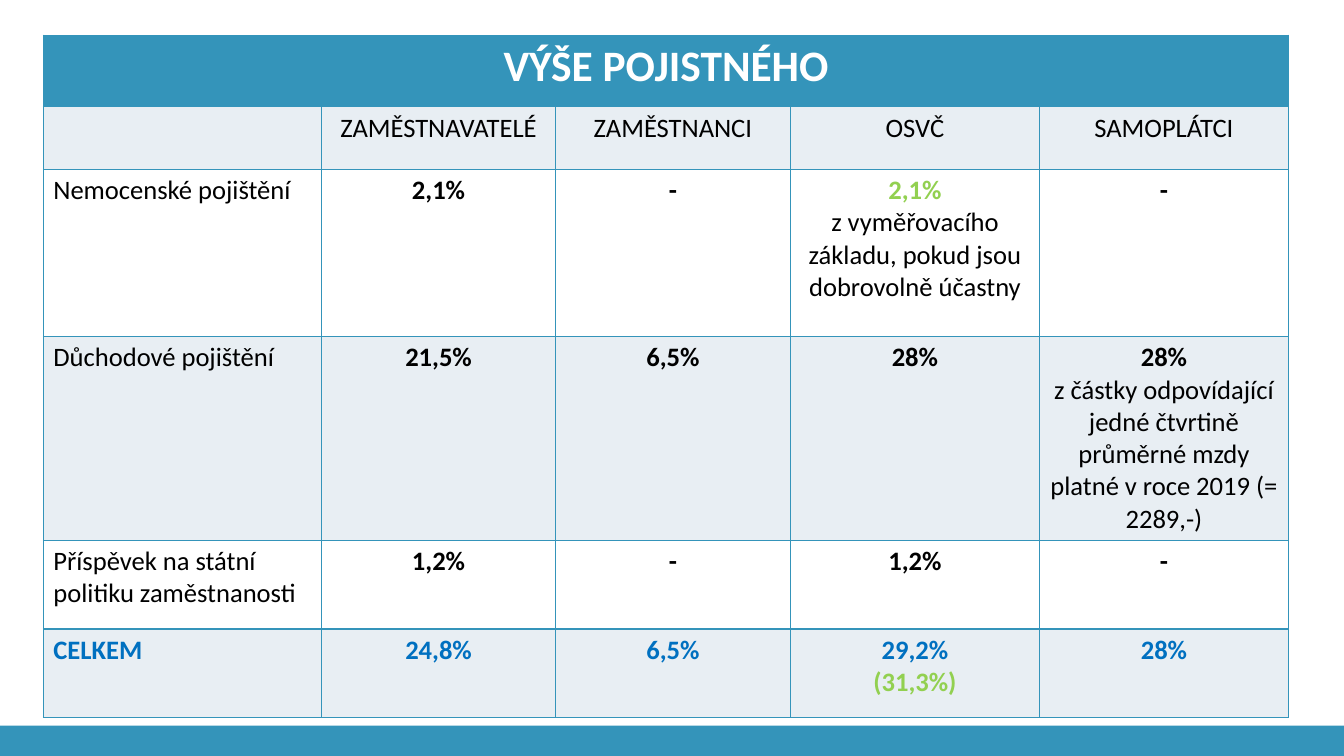
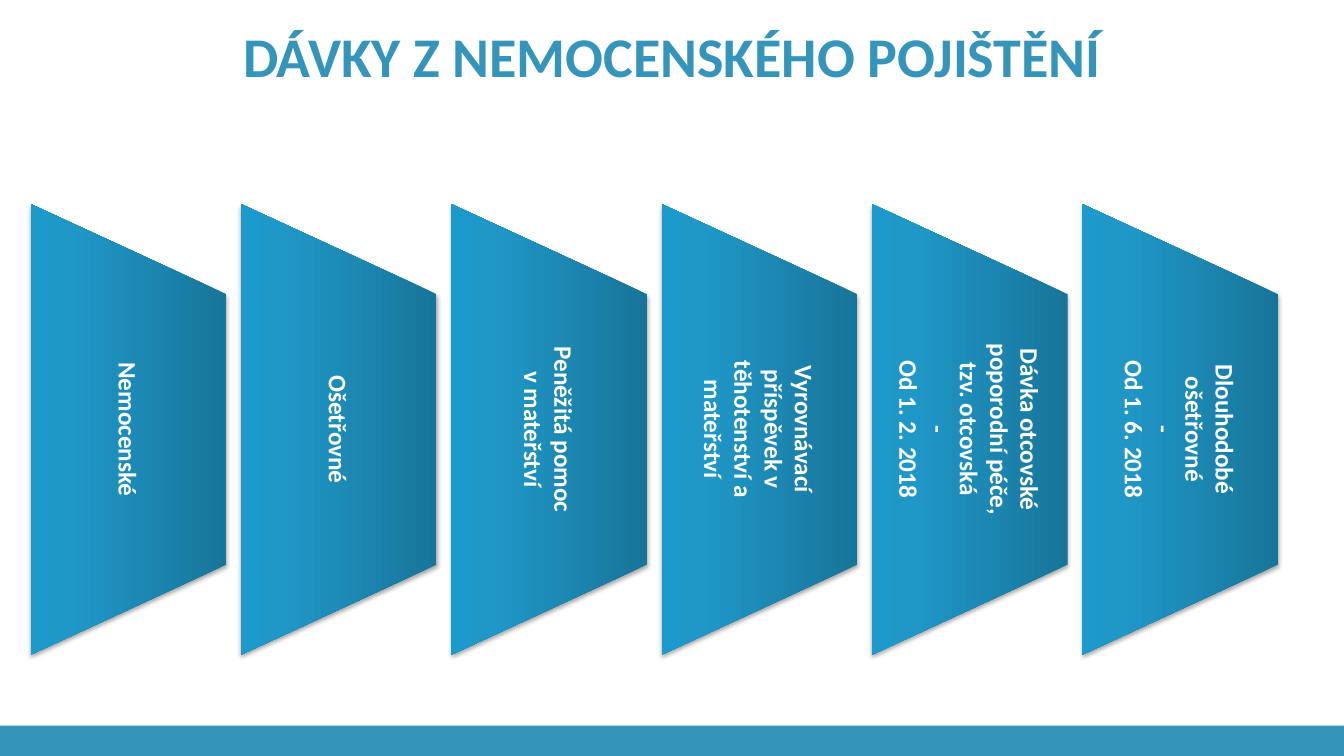
"""Build two slides on Czech social insurance rates and sickness benefits."""
from dataclasses import dataclass

from pptx import Presentation
from pptx.dml.color import RGBColor as RGB
from pptx.enum.shapes import MSO_SHAPE as SHAPE
from pptx.enum.text import MSO_ANCHOR as ANCHOR, PP_ALIGN as ALIGN
from pptx.oxml import parse_xml
from pptx.oxml.ns import nsdecls, qn
from pptx.util import Inches, Pt

FONT = "Calibri"
COLORS = {
    "accent": "3494BA", "white": "FFFFFF", "black": "000000", "stripe": "E8EEF3",
    "green": "92D050", "total": "0070C0",
    "dark": "18759A", "mid": "1F98C8", "light": "1C9ACC",
}
GRADIENT = ((0, "dark"), (80, "mid"), (100, "light"))

SLIDE_W, SLIDE_H, BAND_H = 13.33, 7.5, 0.3
COL_WIDTHS = (2.76, 2.32, 2.33, 2.47, 2.47)
ROW_HEIGHTS = (0.71, 0.62, 1.66, 1.97, 0.88, 0.88)
BLOCK_LEFT, BLOCK_TOP, BLOCK_W, BLOCK_H = -0.96, 3.29, 4.47, 1.94
BLOCK_LAST_LEFT = 9.47


@dataclass(frozen=True)
class Line:
    """One paragraph with its look."""
    text: str
    size: float = 19
    color: str = "black"
    bold: bool = False


def label(text: str) -> list[Line]:
    """Return a plain table entry."""
    return [Line(text)]


def rate(text: str, color: str = "black") -> list[Line]:
    """Return a bold table entry."""
    return [Line(text, color=color, bold=True)]


RATES = [
    [[], label("ZAMĚSTNAVATELÉ"), label("ZAMĚSTNANCI"), label("OSVČ"), label("SAMOPLÁTCI")],
    [label("Nemocenské pojištění"), rate("2,1%"), rate("-"),
     rate("2,1%", "green") + label("z vyměřovacího základu, pokud jsou dobrovolně účastny"),
     rate("-")],
    [label("Důchodové pojištění"), rate("21,5%"), rate("6,5%"), rate("28%"),
     rate("28%") + label("z částky odpovídající jedné čtvrtině průměrné mzdy "
                         "platné v roce 2019 (= 2289,-)")],
    [label("Příspěvek na státní politiku zaměstnanosti"),
     rate("1,2%"), rate("-"), rate("1,2%"), rate("-")],
    [rate("CELKEM", "total"), rate("24,8%", "total"), rate("6,5%", "total"),
     rate("29,2%", "total") + rate("(31,3%)", "green"), rate("28%", "total")],
]

BENEFITS = (
    ("Nemocenské",),
    ("Ošetřovné",),
    ("Peněžitá pomoc v mateřství",),
    ("Vyrovnávací příspěvek v těhotenství a mateřství",),
    ("Dávka otcovské poporodní péče, tzv. otcovská", "-", "Od 1. 2. 2018"),
    ("Dlouhodobé ošetřovné", "-", "Od 1. 6. 2018"),
)


def rgb(name: str) -> RGB:
    """Look up a colour by name."""
    return RGB.from_string(COLORS[name])


def write(tf, lines: list[Line], align=ALIGN.CENTER) -> None:
    """Fill a text frame, one paragraph per line."""
    for i, line in enumerate(lines):
        p = tf.paragraphs[0] if i == 0 else tf.add_paragraph()
        p.alignment = align
        r = p.add_run()
        r.text = line.text
        r.font.name = FONT
        r.font.size = Pt(line.size)
        r.font.bold = line.bold
        r.font.color.rgb = rgb(line.color)


def add_slide(prs):
    """Add a blank slide with the bottom band."""
    s = prs.slides.add_slide(prs.slide_layouts[6])
    sp = s.shapes.add_shape(SHAPE.RECTANGLE, 0, Inches(SLIDE_H - BAND_H),
                            Inches(SLIDE_W), Inches(BAND_H))
    sp.shadow.inherit = False
    sp.fill.solid()
    sp.fill.fore_color.rgb = rgb("accent")
    sp.line.fill.background()
    return s


def add_title(s, text: str) -> None:
    """Add the slide title."""
    tf = s.shapes.add_textbox(0, 0, Inches(SLIDE_W), Inches(0.94)).text_frame
    tf.word_wrap = True
    tf.vertical_anchor = ANCHOR.BOTTOM
    write(tf, [Line(text, 40, "accent", True)])
    tf.paragraphs[0].line_spacing = 0.9


def style_cell(cell, fill: str) -> None:
    """Give a cell its borders and fill."""
    tc_pr = cell._tc.get_or_add_tcPr()
    for side in "LRTB":
        tc_pr.append(parse_xml(
            f'<a:ln{side} {nsdecls("a")} w="{Pt(0.96)}"><a:solidFill>'
            f'<a:srgbClr val="{COLORS["accent"]}"/></a:solidFill></a:ln{side}>'))
    cell.fill.solid()
    cell.fill.fore_color.rgb = rgb(fill)


def add_rates(s) -> None:
    """Add the table of insurance rates."""
    table = s.shapes.add_table(
        len(ROW_HEIGHTS), len(COL_WIDTHS), Inches(0.43), Inches(0.35),
        Inches(sum(COL_WIDTHS)), Inches(sum(ROW_HEIGHTS))).table
    for col, width in zip(table.columns, COL_WIDTHS):
        col.width = Inches(width)
    for i, (row, height) in enumerate(zip(table.rows, ROW_HEIGHTS)):
        row.height = Inches(height)
        fill = "accent" if i == 0 else "stripe" if i % 2 else "white"
        for cell in row.cells:
            style_cell(cell, fill)
    heading = table.cell(0, 0)
    heading.merge(table.cell(0, len(COL_WIDTHS) - 1))
    write(heading.text_frame, [Line("VÝŠE POJISTNÉHO", 31, "white", True)])
    for i, entries in enumerate(RATES, start=1):
        for j, lines in enumerate(entries):
            write(table.cell(i, j).text_frame, lines, ALIGN.CENTER if j else ALIGN.LEFT)


def add_benefit(s, left: float, texts: tuple[str, ...]) -> None:
    """Add one tapered block with text turned downwards."""
    sp = s.shapes.add_shape(SHAPE.TRAPEZOID, Inches(left), Inches(BLOCK_TOP),
                            Inches(BLOCK_W), Inches(BLOCK_H))
    sp.rotation = 90
    sp.adjustments[0] = 0.2 * BLOCK_W / BLOCK_H
    sp.line.fill.background()
    sp.fill.gradient()
    sp.fill.gradient_angle = 270
    sp_pr = sp._element.spPr
    stops = sp_pr.find(qn("a:gradFill")).find(qn("a:gsLst"))
    for stop in list(stops):
        stops.remove(stop)
    for pos, color in GRADIENT:
        stops.append(parse_xml(
            f'<a:gs {nsdecls("a")} pos="{pos * 1000}">'
            f'<a:srgbClr val="{COLORS[color]}"/></a:gs>'))
    sp.shadow.inherit = False
    sp_pr.find(qn("a:effectLst")).append(parse_xml(
        f'<a:outerShdw {nsdecls("a")} blurRad="{Pt(3.1)}" dist="{Pt(1.8)}" dir="5400000" '
        f'rotWithShape="0"><a:srgbClr val="{COLORS["black"]}">'
        '<a:alpha val="35000"/></a:srgbClr></a:outerShdw>'))
    tf = sp.text_frame
    tf.word_wrap = True
    tf.vertical_anchor = ANCHOR.MIDDLE
    tf.margin_left = tf.margin_right = Inches(0.76)
    tf.margin_top, tf.margin_bottom = Inches(0), Inches(0.26)
    write(tf, [Line(text, 18, "white", True) for text in texts])


def main() -> None:
    """Build and save the presentation."""
    prs = Presentation()
    prs.slide_width, prs.slide_height = Inches(SLIDE_W), Inches(SLIDE_H)
    add_rates(add_slide(prs))
    s = add_slide(prs)
    add_title(s, "DÁVKY Z NEMOCENSKÉHO POJIŠTĚNÍ")
    pitch = (BLOCK_LAST_LEFT - BLOCK_LEFT) / (len(BENEFITS) - 1)
    for i, texts in enumerate(BENEFITS):
        add_benefit(s, BLOCK_LEFT + i * pitch, texts)
    prs.save("out.pptx")


if __name__ == "__main__":
    main()
